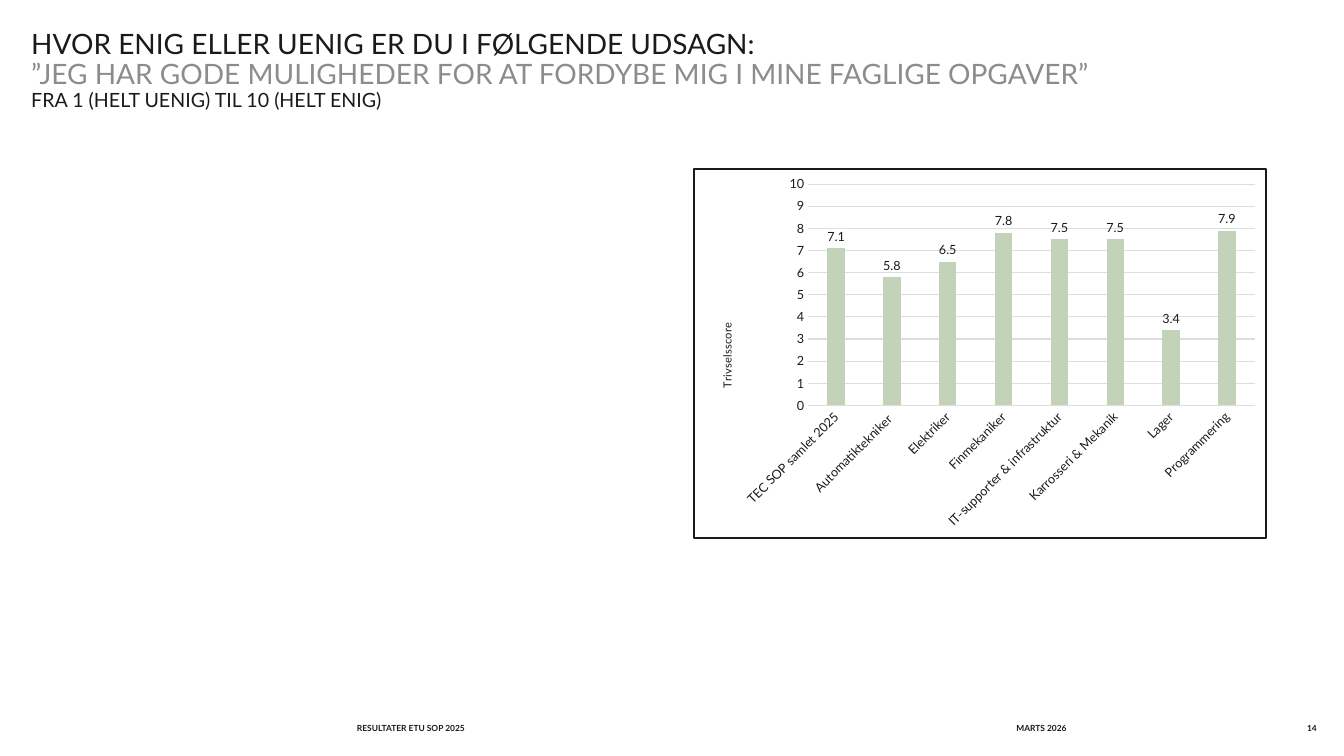
from lxml import etree
from pptx import Presentation
from pptx.chart.data import CategoryChartData
from pptx.dml.color import RGBColor
from pptx.enum import chart as ch, text
from pptx.oxml import parse_xml
from pptx.oxml.ns import nsdecls, qn
from pptx.util import Inches, Pt

FONT = "Lato"
INK = "1A1A1A"
GREY = "8C8C8C"
GRID = "DDDDDD"
GREEN = "C2D3BA"

SCORES = {
    "TEC SOP samlet 2025": 7.1,
    "Automatiktekniker ": 5.8,
    "Elektriker": 6.5,
    "Finmekaniker": 7.8,
    "IT-supporter & infrastruktur": 7.5,
    "Karrosseri & Mekanik": 7.5,
    "Lager": 3.4,
    "Programmering": 7.9,
}


def rgb(value):
    return RGBColor.from_string(value)


def set_font(font, size, color=INK, bold=False):
    font.name = FONT
    font.size = Pt(size)
    font.bold = bold
    font.color.rgb = rgb(color)


def set_line(line, color=GRID, width=0.75):
    line.color.rgb = rgb(color)
    line.width = Pt(width)


def add_text(slide, box, lines, bold=False, spacing=1.0,
             align=text.PP_ALIGN.LEFT, anchor=text.MSO_ANCHOR.MIDDLE):
    tf = slide.shapes.add_textbox(*map(Inches, box)).text_frame
    tf.word_wrap = True
    tf.vertical_anchor = anchor
    tf.margin_left = tf.margin_top = tf.margin_right = tf.margin_bottom = 0
    for i, (words, size, color) in enumerate(lines):
        p = tf.add_paragraph() if i else tf.paragraphs[0]
        p.text = words
        p.alignment = align
        p.line_spacing = spacing
        set_font(p.font, size, color, bold)


def add_footer(slide, left, width, words, align=text.PP_ALIGN.LEFT):
    add_text(slide, (left, 7.15, width, 0.15), [(words, 6, INK)],
             bold=True, align=align)


def place(parent, index, **parts):
    for old in parent.findall(qn("c:layout")):
        parent.remove(old)
    layout = parse_xml(f"<c:layout {nsdecls('c')}><c:manualLayout/></c:layout>")
    for tag, value in parts.items():
        etree.SubElement(layout[0], qn(f"c:{tag}")).set("val", str(value))
    parent.insert(index, layout)


def frame_chart(chart):
    chart._chartSpace.find(qn("c:chart")).addnext(parse_xml(
        f'<c:spPr {nsdecls("c", "a")}>'
        '<a:solidFill><a:srgbClr val="FFFFFF"/></a:solidFill>'
        f'<a:ln w="{Pt(1.5)}"><a:solidFill><a:srgbClr val="{INK}"/></a:solidFill></a:ln>'
        '</c:spPr>'))


def style_category_axis(axis):
    axis.major_tick_mark = ch.XL_TICK_MARK.NONE
    set_font(axis.tick_labels.font, 9)
    set_line(axis.format.line)
    body = axis._element.find(qn("c:txPr")).find(qn("a:bodyPr"))
    body.set("rot", "-2700000")
    body.set("vert", "horz")


def style_value_axis(axis):
    axis.minimum_scale, axis.maximum_scale, axis.major_unit = 0, 10, 1
    axis.major_tick_mark = ch.XL_TICK_MARK.NONE
    set_font(axis.tick_labels.font, 9)
    axis.format.line.fill.background()
    set_line(axis.major_gridlines.format.line)
    tf = axis.axis_title.text_frame
    tf.text = "Trivselsscore"
    set_font(tf.paragraphs[0].font, 8)
    body = tf._txBody.find(qn("a:bodyPr"))
    body.set("rot", "-5400000")
    body.set("vert", "horz")
    place(axis.axis_title._element, 1, xMode="edge", yMode="edge", x=0.04, y=0.41)


def add_score_chart(slide, box):
    data = CategoryChartData(number_format="0.0")
    data.categories = list(SCORES)
    data.add_series("Series 1", list(SCORES.values()))
    chart = slide.shapes.add_chart(
        ch.XL_CHART_TYPE.COLUMN_CLUSTERED, *map(Inches, box), data).chart
    chart.has_title = False
    chart.has_legend = False
    set_font(chart.font, 10)
    frame_chart(chart)
    style_category_axis(chart.category_axis)
    style_value_axis(chart.value_axis)
    chart.value_axis.tick_labels.number_format = "0"
    chart.value_axis.tick_labels.number_format_is_linked = False

    plot = chart.plots[0]
    plot.vary_by_categories = False
    plot.gap_width = 219
    plot.overlap = -27
    fill = plot.series[0].format.fill
    fill.solid()
    fill.fore_color.rgb = rgb(GREEN)
    labels = plot.series[0].data_labels
    labels.show_value = True
    labels.position = ch.XL_LABEL_POSITION.OUTSIDE_END
    set_font(labels.font, 9)
    place(chart._chartSpace.find(qn("c:chart")).find(qn("c:plotArea")), 0,
          layoutTarget="inner", xMode="edge", yMode="edge",
          x=0.2, y=0.04, w=0.78, h=0.6)


def main():
    prs = Presentation()
    prs.slide_width, prs.slide_height = Inches(13.33), Inches(7.5)
    slide = prs.slides.add_slide(prs.slide_layouts[6])
    add_footer(slide, 10.08, 1.49, "MARTS 2026")
    add_footer(slide, 3.54, 4.41, "RESULTATER ETU SOP 2025")
    add_footer(slide, 12.36, 0.7, "14", text.PP_ALIGN.RIGHT)
    add_text(slide, (0.31, 0.3, 12.75, 1.17), [
        ("HVOR ENIG ELLER UENIG ER DU I FØLGENDE UDSAGN:", 20, INK),
        ("”JEG HAR GODE MULIGHEDER FOR AT FORDYBE MIG I MINE FAGLIGE OPGAVER”", 20, GREY),
        ("FRA 1 (HELT UENIG) TIL 10 (HELT ENIG)", 14, INK),
    ], spacing=0.9, anchor=text.MSO_ANCHOR.TOP)
    add_score_chart(slide, (6.87, 1.67, 5.7, 3.68))
    prs.save("out.pptx")


if __name__ == "__main__":
    main()
